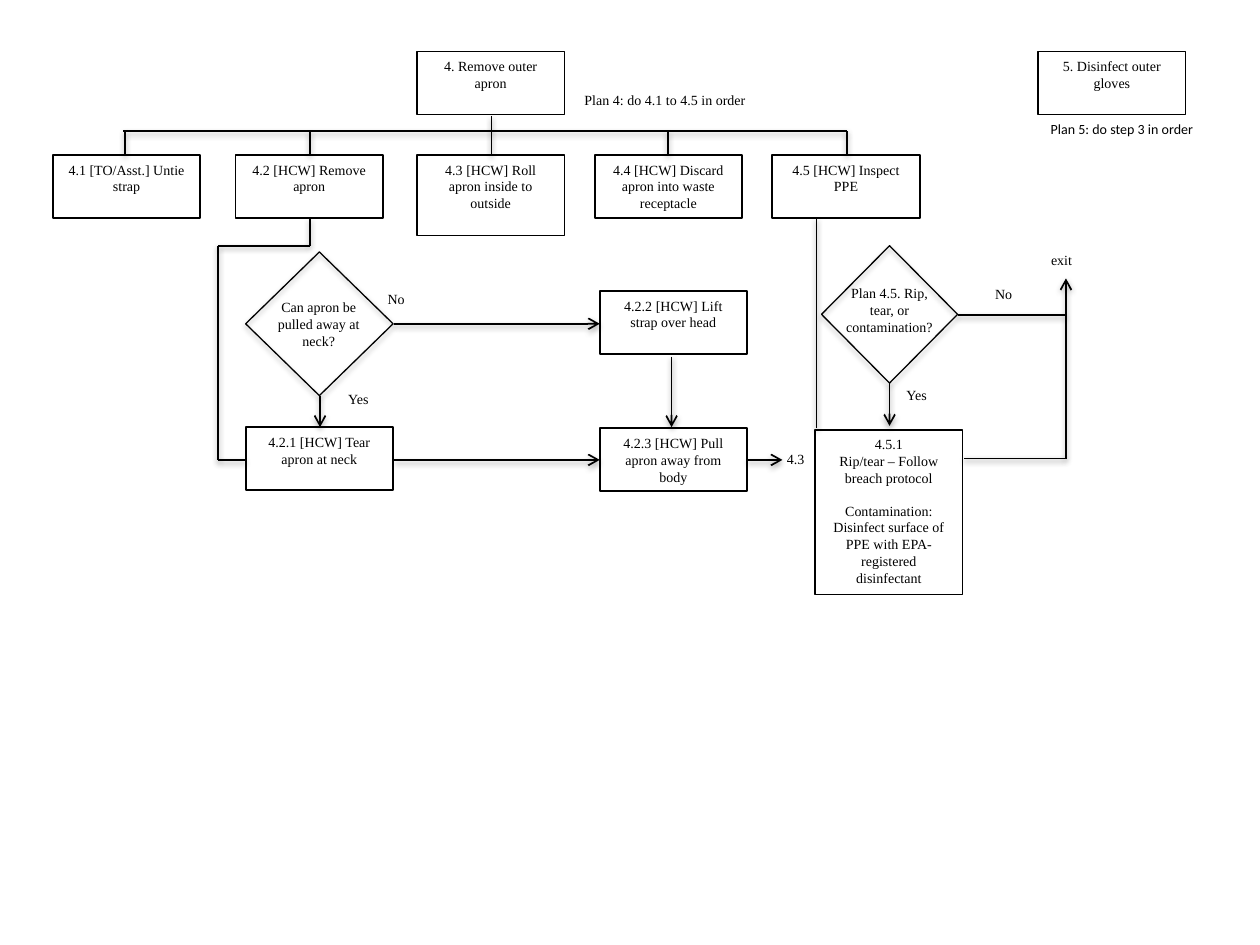
import pptx
import pptx.util
import pptx.dml.color
import pptx.enum.shapes
import pptx.enum.text
import pptx.oxml
import pptx.oxml.ns

Inches = pptx.util.Inches
Pt = pptx.util.Pt
Color = pptx.dml.color.RGBColor
Shape = pptx.enum.shapes.MSO_SHAPE
Align = pptx.enum.text.PP_ALIGN

theme = {
    "ink": Color(0, 0, 0),
    "paper": Color(255, 255, 255),
    "font": {"name": "Times New Roman", "size": Pt(8)},
    "plain": {"name": "Calibri", "size": Pt(8)},
    "frame": {"word_wrap": True, "vertical_anchor": pptx.enum.text.MSO_ANCHOR.TOP},
    "thin": Pt(0.75),
    "line": Pt(1),
    "gap": Pt(9.2),
}

deck = pptx.Presentation()
deck.slide_width = Inches(10)
deck.slide_height = Inches(7.5)
slide = deck.slides.add_slide(deck.slide_layouts[6])
shapes = slide.shapes


def write(shape, text, font=theme["font"], align=Align.CENTER):
    frame = shape.text_frame
    for key, val in theme["frame"].items():
        setattr(frame, key, val)
    frame.text = text
    for para in frame.paragraphs:
        para.alignment = align
        for run in para.runs:
            for key, val in font.items():
                setattr(run.font, key, val)
            run.font.color.rgb = theme["ink"]
    return frame


def shade(shape, dist, alpha):
    space = pptx.oxml.ns.nsdecls("a")
    shape._element.spPr.append(pptx.oxml.parse_xml(
        f'<a:effectLst {space}><a:outerShdw blurRad="40000" dist="{dist}" '
        f'dir="5400000" rotWithShape="0"><a:srgbClr val="000000">'
        f'<a:alpha val="{alpha}"/></a:srgbClr></a:outerShdw></a:effectLst>'))


wide, high = 1.17, 0.5
breach = "4.5.1\nRip/tear – Follow breach protocol\nContamination: Disinfect surface of PPE with EPA-registered disinfectant"
steps = [
    (3.31, 0.41, high, "4. Remove outer apron"),
    (8.24, 0.41, high, "5. Disinfect outer gloves"),
    (0.42, 1.23, high, "4.1 [TO/Asst.] Untie strap"),
    (1.87, 1.23, high, "4.2 [HCW] Remove apron"),
    (3.31, 1.23, 0.64, "4.3 [HCW] Roll apron inside to outside"),
    (4.72, 1.23, high, "4.4 [HCW] Discard apron into waste receptacle"),
    (6.13, 1.23, high, "4.5 [HCW] Inspect PPE"),
    (1.95, 3.39, high, "4.2.1 [HCW] Tear apron at neck"),
    (4.76, 2.31, high, "4.2.2 [HCW] Lift strap over head"),
    (4.76, 3.4, high, "4.2.3 [HCW] Pull apron away from body"),
    (6.47, 3.41, 1.31, breach),
]
for left, top, tall, text in steps:
    box = shapes.add_shape(Shape.RECTANGLE, Inches(left), Inches(top), Inches(wide), Inches(tall))
    box.shadow.inherit = False
    box.fill.solid()
    box.fill.fore_color.rgb = theme["paper"]
    box.line.color.rgb = theme["ink"]
    box.line.width = theme["line"]
    frame = write(box, text)
    if text == breach:
        frame.paragraphs[-1].space_before = theme["gap"]

for spot in [(1.95, 2, 1.17, 1.14), (6.52, 1.95, 1.08, 1.09)]:
    gate = shapes.add_shape(Shape.DIAMOND, *map(Inches, spot))
    gate.fill.background()
    gate.line.color.rgb = theme["ink"]
    gate.line.width = theme["thin"]
    shade(gate, 23000, 35000)

arrows = [
    (2.54, 3.14, 2.54, 3.39),
    (5.93, 3.65, 6.21, 3.65),
    (3.13, 2.57, 4.76, 2.57),
    (3.13, 3.65, 4.76, 3.65),
    (5.33, 2.83, 5.33, 3.39),
    (7.06, 3.04, 7.06, 3.38),
    (8.46, 3.64, 8.46, 2.21),
]
drops = [(x, 1.04, x, 1.23) for x in (0.99, 2.46, 5.3, 6.72)]
lines = drops + [
    (3.9, 0.92, 3.9, 1.23),
    (0.98, 1.04, 6.72, 1.04),
    (8.46, 3.64, 7.65, 3.64),
    (7.6, 2.5, 8.46, 2.5),
    (1.95, 3.65, 1.73, 3.65),
    (1.73, 3.65, 1.73, 1.95),
    (1.73, 1.95, 2.46, 1.95),
    (2.46, 1.73, 2.46, 1.95),
    (6.48, 1.73, 6.48, 3.4),
]
for ends in arrows + lines:
    link = shapes.add_connector(pptx.enum.shapes.MSO_CONNECTOR.STRAIGHT, *map(Inches, ends))
    link.line.color.rgb = theme["ink"]
    link.line.width = theme["line"]
    if ends in arrows:
        link.line._get_or_add_ln().append(pptx.oxml.parse_xml(
            f'<a:tailEnd {pptx.oxml.ns.nsdecls("a")} type="arrow"/>'))
    shade(link, 20000, 38000)

notes = [
    (2.04, 2.32, 0.98, 0.5, "Can apron be pulled away at neck?"),
    (6.57, 2.21, 0.98, 0.5, "Plan 4.5. Rip, tear, or contamination?"),
    (2.66, 3.05, 0.37, 0.37, "Yes"),
    (2.96, 2.26, 0.37, 0.24, "No"),
    (6.13, 3.53, 0.37, 0.24, "4.3"),
    (7.77, 2.22, 0.39, 0.23, "No"),
    (7.08, 3.02, 0.39, 0.23, "Yes"),
    (8.24, 1.95, 0.37, 0.24, "exit"),
]
for *spot, text in notes:
    note = shapes.add_textbox(*map(Inches, spot))
    write(note, text).word_wrap = spot[2] > 0.5

plans = [
    (8.24, 0.91, 1.76, 0.24, "Plan 5: do step 3 in order", theme["plain"]),
    (4.54, 0.68, 2.52, 0.24, "Plan 4: do 4.1 to 4.5 in order", theme["font"]),
]
for *spot, text, font in plans:
    write(shapes.add_textbox(*map(Inches, spot)), text, font, Align.LEFT)

deck.save("out.pptx")
